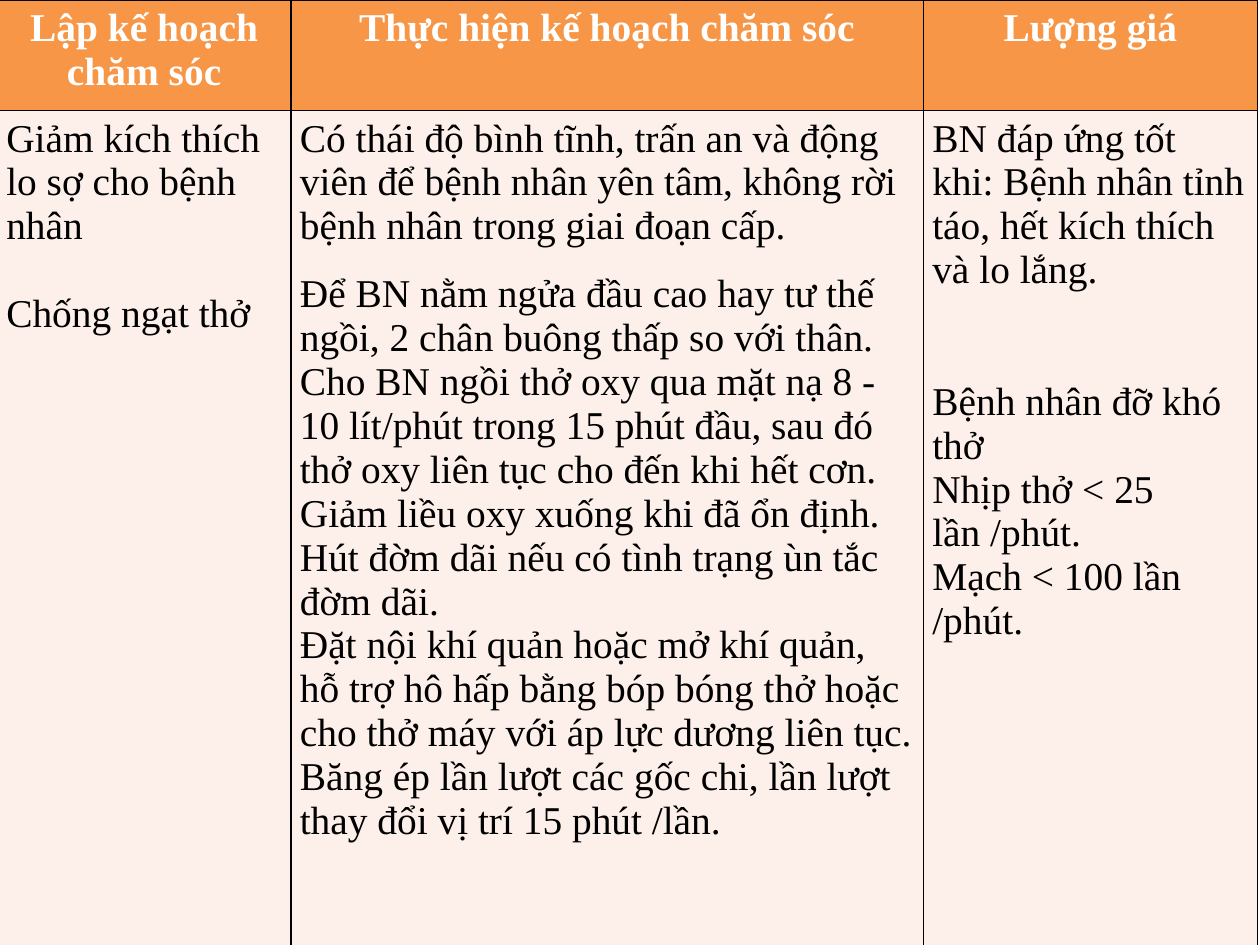
from lxml import etree
from pptx import Presentation
from pptx import util as u
from pptx.dml.color import RGBColor
from pptx.enum import text
from pptx.oxml import ns

HUES = {"head": "F79646", "body": "FDEFE9", "line": "000000",
        "light": "FFFFFF", "dark": "000000"}
FACE = {"name": "Times New Roman", "size": u.Pt(22.5)}
INSET = {"margin_left": u.Inches(0.07), "margin_right": u.Inches(0.07),
         "margin_top": u.Inches(0.05), "margin_bottom": u.Inches(0.05)}
HALF, ONE, TWO = 13.7, 25, 50  # gaps between blocks, in points
NB = chr(160)  # keeps words on one line

COLS = [0.233, 0.502, 0.265]  # shares of the slide's width
ROWS = [0.117, 0.885]  # shares of the slide's height

HEADS = ["Lập kế hoạch chăm sóc", "Thực hiện kế hoạch chăm sóc", "Lượng giá"]
# Each cell is a list of (gap before, paragraph)
CARE = [
    [(0, "Giảm kích thích lo sợ cho bệnh nhân"),
     (ONE, "Chống ngạt thở")],
    [(0, "Có thái độ bình tĩnh, trấn an và động viên để bệnh nhân yên tâm, "
         "không rời bệnh nhân trong giai đoạn cấp."),
     (HALF, "Để BN nằm ngửa đầu cao hay tư thế ngồi, 2 chân buông thấp "
            "so với thân."),
     (0, "Cho BN ngồi thở oxy qua mặt nạ 8 - 10 lít/phút trong 15 phút đầu, "
         "sau đó thở oxy liên tục cho đến khi hết cơn. "
         "Giảm liều oxy xuống khi đã ổn định."),
     (0, "Hút đờm dãi nếu có tình trạng ùn tắc đờm dãi."),
     (0, "Đặt nội khí quản hoặc mở khí quản, hỗ trợ hô hấp bằng bóp bóng thở "
         "hoặc cho thở máy với áp lực dương liên tục."),
     (0, "Băng ép lần lượt các gốc chi, lần lượt thay đổi vị trí "
         "15 phút /lần.")],
    [(0, f"BN đáp ứng tốt khi:{NB}Bệnh nhân tỉnh táo, hết kích thích "
         "và lo lắng."),
     (TWO, f"Bệnh nhân đỡ khó thở\nNhịp thở < 25 lần{NB}/phút."),
     (0, "Mạch < 100 lần /phút.")],
]


def put(item, vals):
    for key, val in vals.items():
        setattr(item, key, val)


class Deck:
    def __init__(self, wide, high):
        self.prs = Presentation()
        self.wide, self.high = u.Inches(wide), u.Inches(high)
        put(self.prs, {"slide_width": self.wide, "slide_height": self.high})
        self.slide = self.prs.slides.add_slide(self.prs.slide_layouts[6])

    def grid(self, left, top, cols, rows):
        """Add a table whose lengths are shares of the slide."""
        table = self.slide.shapes.add_table(
            len(rows), len(cols), int(left * self.wide), int(top * self.high),
            int(sum(cols) * self.wide), int(sum(rows) * self.high)).table
        for col, share in zip(table.columns, cols):
            col.width = int(share * self.wide)
        for row, share in zip(table.rows, rows):
            row.height = int(share * self.high)
        return table

    def edge(self, cell):
        """Draw a thin line on all four sides of a cell."""
        props = cell._tc.get_or_add_tcPr()
        for side in ("lnL", "lnR", "lnT", "lnB"):
            line = etree.SubElement(props, ns.qn(f"a:{side}"), w=str(u.Pt(1)))
            fill = etree.SubElement(line, ns.qn("a:solidFill"))
            etree.SubElement(fill, ns.qn("a:srgbClr"), val=HUES["line"])

    def cell(self, cell, paras, fill, ink, bold, align):
        self.edge(cell)
        put(cell, INSET)
        cell.fill.solid()
        cell.fill.fore_color.rgb = RGBColor.from_string(HUES[fill])
        frame = cell.text_frame
        for i, (gap, words) in enumerate(paras):
            para = frame.add_paragraph() if i else frame.paragraphs[0]
            put(para, {"text": words, "alignment": align,
                       "space_before": u.Pt(gap)})
            for run in para.runs:
                put(run.font, {**FACE, "bold": bold})
                run.font.color.rgb = RGBColor.from_string(HUES[ink])

    def save(self):
        self.prs.save("out.pptx")


def main():
    deck = Deck(10, 7.5)
    plan = deck.grid(-0.002, 0, COLS, ROWS)
    for i, (head, care) in enumerate(zip(HEADS, CARE)):
        deck.cell(plan.cell(0, i), [(0, head)], "head", "light", True,
                  text.PP_ALIGN.CENTER)
        deck.cell(plan.cell(1, i), care, "body", "dark", False,
                  text.PP_ALIGN.LEFT)
    deck.save()


if __name__ == "__main__":
    main()
